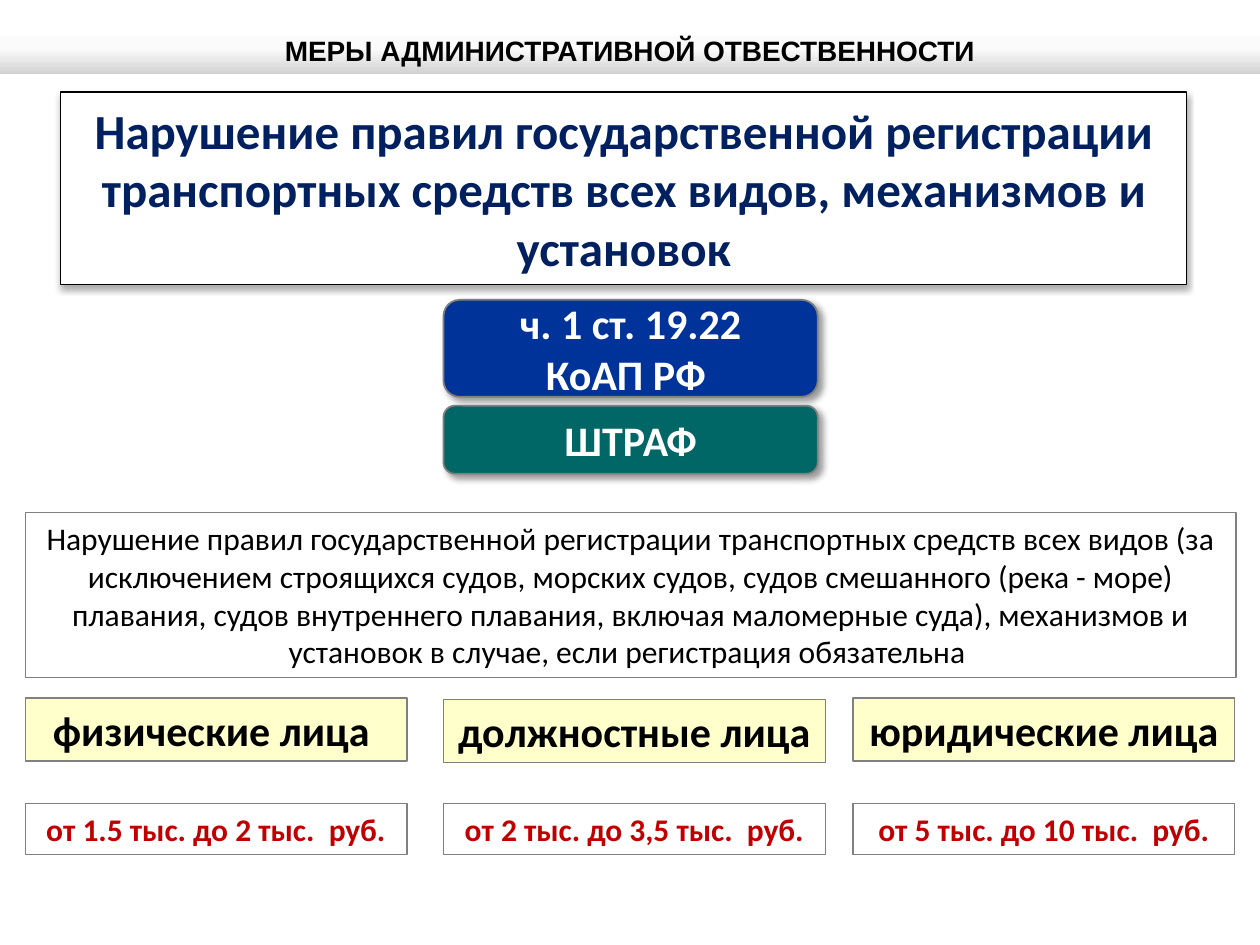
from copy import deepcopy

from lxml.etree import SubElement
from pptx import Presentation
from pptx.dml.color import RGBColor
from pptx.enum.shapes import MSO_SHAPE
from pptx.enum.text import MSO_ANCHOR, MSO_AUTO_SIZE, PP_ALIGN
from pptx.oxml.ns import qn
from pptx.util import Inches, Pt

COLORS = {
    "white": "FFFFFF", "black": "000000", "border": "808080",
    "band_mid": "FBFBFB", "band_end": "D1D1D1", "heading": "002060",
    "article": "003399", "penalty": "006666", "party": "FFFFCC", "amount": "C00000",
}


def rgb(name):
    return RGBColor.from_string(COLORS[name])


def write(shape, lines, size, color, bold=True, font="Calibri"):
    frame = shape.text_frame
    frame.word_wrap = True
    frame.text = "\n".join(lines)
    for paragraph in frame.paragraphs:
        paragraph.alignment = PP_ALIGN.CENTER
        paragraph.font.name = font
        paragraph.font.size = Pt(size)
        paragraph.font.bold = bold
        paragraph.font.color.rgb = rgb(color)


def add_box(slide, box, fill=None, line="border", width=0.75, rounded=False, grow=True):
    kind = MSO_SHAPE.ROUNDED_RECTANGLE if rounded else MSO_SHAPE.RECTANGLE
    shape = slide.shapes.add_shape(kind, *map(Inches, box))
    shape.shadow.inherit = False
    if fill:
        shape.fill.solid()
        shape.fill.fore_color.rgb = rgb(fill)
    else:
        shape.fill.background()
    shape.line.color.rgb = rgb(line)
    shape.line.width = Pt(width)
    if grow:
        shape.text_frame.auto_size = MSO_AUTO_SIZE.SHAPE_TO_FIT_TEXT
        shape.text_frame.vertical_anchor = MSO_ANCHOR.TOP
    return shape


def add_shadow(shape, opacity, blur, distance, angle):
    effects = shape._element.spPr.find(qn("a:effectLst"))
    outer = SubElement(effects, qn("a:outerShdw"), blurRad=str(Pt(blur)),
                       dist=str(Pt(distance)), dir=str(angle * 60000), rotWithShape="0")
    color = SubElement(outer, qn("a:srgbClr"), val=COLORS["black"])
    SubElement(color, qn("a:alpha"), val=str(opacity * 1000))


def title_band(slide, box, text):
    title = slide.shapes.title
    title.left, title.top, title.width, title.height = map(Inches, box)
    title.fill.gradient()
    title.fill.gradient_angle = 270
    # The gradient starts with two stops; a third goes between them
    first = title.fill.gradient_stops[0]._gs
    first.addnext(deepcopy(first))
    stops = title.fill.gradient_stops
    for stop, position, color in zip(stops, (0, 0.5, 1), ("white", "band_mid", "band_end")):
        stop.position = position
        stop.color.rgb = rgb(color)
    write(title, [text], 16, "black", font="Arial")
    title.text_frame.auto_size = MSO_AUTO_SIZE.NONE
    title.text_frame.vertical_anchor = MSO_ANCHOR.TOP
    title.text_frame.paragraphs[0].line_spacing = 1.15


def offence_heading(slide, box, text):
    heading = add_box(slide, box, "white", "black")
    add_shadow(heading, 32, 3.5, 2.2, 90)
    frame = heading.text_frame
    frame.vertical_anchor = MSO_ANCHOR.MIDDLE
    frame.margin_left = frame.margin_right = 0
    frame.margin_top = frame.margin_bottom = Inches(0.06)
    write(heading, [text], 28, "heading")


def article_and_penalty(slide, box):
    left, top, width, height = box
    article_height, penalty_height = 0.77, 0.54
    blocks = [
        (top, article_height, "article", ["ч. 1 ст. 19.22", "КоАП РФ "]),
        (top + height - penalty_height, penalty_height, "penalty", ["ШТРАФ"]),
    ]
    for block_top, block_height, fill, lines in blocks:
        block = add_box(slide, (left, block_top, width, block_height), fill,
                        width=1, rounded=True, grow=False)
        add_shadow(block, 40, 4, 3, 45)
        write(block, lines, 24, "white")


def offence_description(slide, box, text):
    description = add_box(slide, box, "white")
    write(description, [text], 18, "black", bold=False)


def fine_column(slide, box, party, amount):
    left, top, width, height = box
    party_height, amount_height = 0.5, 0.4
    party_box = add_box(slide, (left, top, width, party_height), "party")
    write(party_box, [party], 24, "black")
    amount_top = top + height - amount_height
    amount_box = add_box(slide, (left, amount_top, width, amount_height))
    write(amount_box, [amount], 18, "amount")


def main():
    prs = Presentation()
    prs.slide_width, prs.slide_height = Inches(10), Inches(7.5)
    slide = prs.slides.add_slide(prs.slide_layouts[5])

    title_band(slide, (0, 0.18, 10, 0.41), "МЕРЫ АДМИНИСТРАТИВНОЙ ОТВЕСТВЕННОСТИ")
    offence_heading(
        slide, (0.48, 0.73, 8.94, 1.53),
        "Нарушение правил государственной регистрации транспортных средств "
        "всех видов, механизмов и установок")
    article_and_penalty(slide, (3.52, 2.38, 2.97, 1.38))
    offence_description(
        slide, (0.2, 4.07, 9.61, 1.31),
        "Нарушение правил государственной регистрации транспортных средств всех видов "
        "(за исключением строящихся судов, морских судов, судов смешанного (река - море) "
        "плавания, судов внутреннего плавания, включая маломерные суда), механизмов и "
        "установок в случае, если регистрация обязательна ")

    # Fines by offender; the middle column starts slightly lower
    bottom = 6.78
    fines = [
        (0.2, 5.54, "физические лица ", "от 1.5 тыс. до 2 тыс.  руб."),
        (3.52, 5.55, "должностные лица ", "от 2 тыс. до 3,5 тыс.  руб."),
        (6.77, 5.54, "юридические лица ", "от 5 тыс. до 10 тыс.  руб."),
    ]
    for left, top, party, amount in fines:
        fine_column(slide, (left, top, 3.03, bottom - top), party, amount)

    prs.save("out.pptx")


if __name__ == "__main__":
    main()
